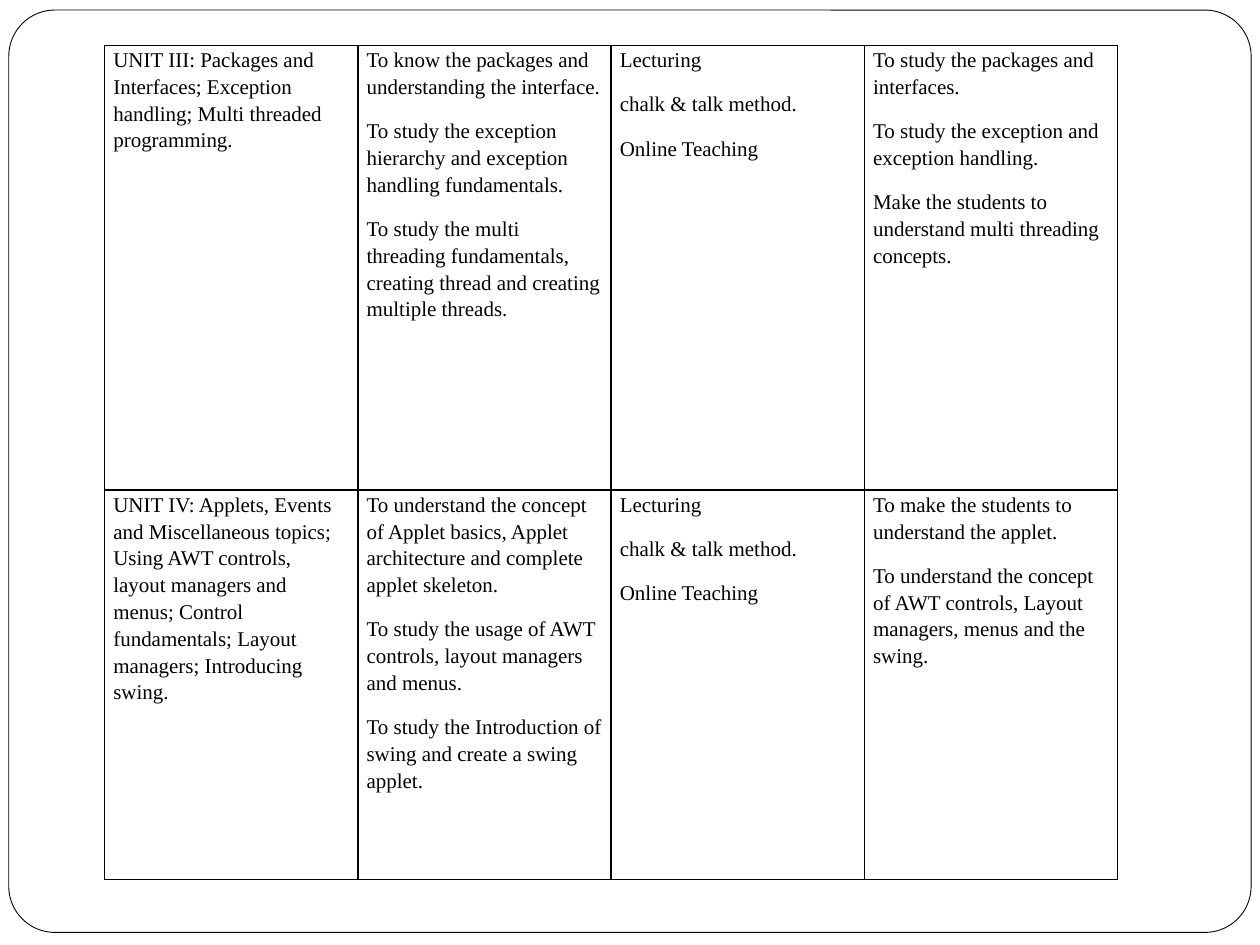
from dataclasses import dataclass

from lxml.etree import SubElement
from pptx import Presentation
from pptx.dml.color import RGBColor
from pptx.enum.shapes import MSO_SHAPE as Shape
from pptx.oxml.ns import qn
from pptx.util import Inches, Pt

BLACK = "000000"
WHITE = "FFFFFF"
FONT = "Times New Roman"
COLUMN_WIDTH = 2.01
METHODS = ["Lecturing", "chalk & talk method.", "Online Teaching"]


@dataclass
class Unit:
    height: float
    topic: str
    objectives: list[str]
    methods: list[str]
    outcomes: list[str]


UNITS = [
    Unit(
        3.53,
        "UNIT III: Packages and Interfaces; Exception handling; "
        "Multi threaded programming.",
        [
            "To know the packages and understanding the interface.",
            "To study the exception hierarchy and exception handling fundamentals.",
            "To study the multi threading fundamentals, creating thread and "
            "creating multiple threads.",
        ],
        METHODS,
        [
            "To study the packages and interfaces.",
            "To study the exception and exception handling.",
            "Make the students to understand multi threading concepts.",
        ],
    ),
    Unit(
        3.09,
        "UNIT IV: Applets, Events and Miscellaneous topics; Using AWT controls, "
        "layout managers and menus; Control fundamentals; Layout managers; "
        "Introducing swing.",
        [
            "To understand the concept of Applet basics, Applet architecture and "
            "complete applet skeleton.",
            "To study the usage of AWT controls, layout managers and menus.",
            "To study the Introduction of swing and create a swing applet.",
        ],
        METHODS,
        [
            "To make the students to understand the applet.",
            "To understand the concept of AWT controls, Layout managers, menus "
            "and the swing.",
        ],
    ),
]


def color(value: str) -> RGBColor:
    return RGBColor.from_string(value)


def add_frame(slide) -> None:
    frame = slide.shapes.add_shape(
        Shape.ROUNDED_RECTANGLE, Inches(0.07), Inches(0.08), Inches(9.86), Inches(7.32)
    )
    frame.adjustments[0] = 0.05
    frame.shadow.inherit = False
    frame.fill.solid()
    frame.fill.fore_color.rgb = color(WHITE)
    frame.line.color.rgb = color(BLACK)
    frame.line.width = Pt(0.5)


def set_borders(cell, width: float = 1) -> None:
    properties = cell._tc.get_or_add_tcPr()
    for side in ("lnL", "lnR", "lnT", "lnB"):
        line = SubElement(properties, qn(f"a:{side}"), w=str(Pt(width)))
        fill = SubElement(line, qn("a:solidFill"))
        SubElement(fill, qn("a:srgbClr"), val=BLACK)


def fill_cell(cell, texts: list[str]) -> None:
    cell.margin_left = cell.margin_right = Inches(0.07)
    cell.margin_top = cell.margin_bottom = 0
    set_borders(cell)
    cell.fill.background()
    cell.text_frame.text = "\n".join(texts)
    for paragraph in cell.text_frame.paragraphs:
        paragraph.line_spacing = 1.15
        paragraph.space_after = Pt(10)
        font = paragraph.runs[0].font
        font.name = FONT
        font.size = Pt(12)
        font.color.rgb = color(BLACK)


def add_unit_table(slide, units: list[Unit]) -> None:
    height = sum(unit.height for unit in units)
    table = slide.shapes.add_table(
        len(units), 4, Inches(0.83), Inches(0.36), Inches(4 * COLUMN_WIDTH), Inches(height)
    ).table
    table.first_row = False
    table.horz_banding = False
    for column in table.columns:
        column.width = Inches(COLUMN_WIDTH)
    for row, unit in zip(table.rows, units):
        row.height = Inches(unit.height)
        contents = [[unit.topic], unit.objectives, unit.methods, unit.outcomes]
        for cell, texts in zip(row.cells, contents):
            fill_cell(cell, texts)


def main() -> None:
    presentation = Presentation()
    presentation.slide_width = Inches(10)
    presentation.slide_height = Inches(7.5)
    slide = presentation.slides.add_slide(presentation.slide_layouts[6])
    add_frame(slide)
    add_unit_table(slide, UNITS)
    presentation.save("out.pptx")


if __name__ == "__main__":
    main()
